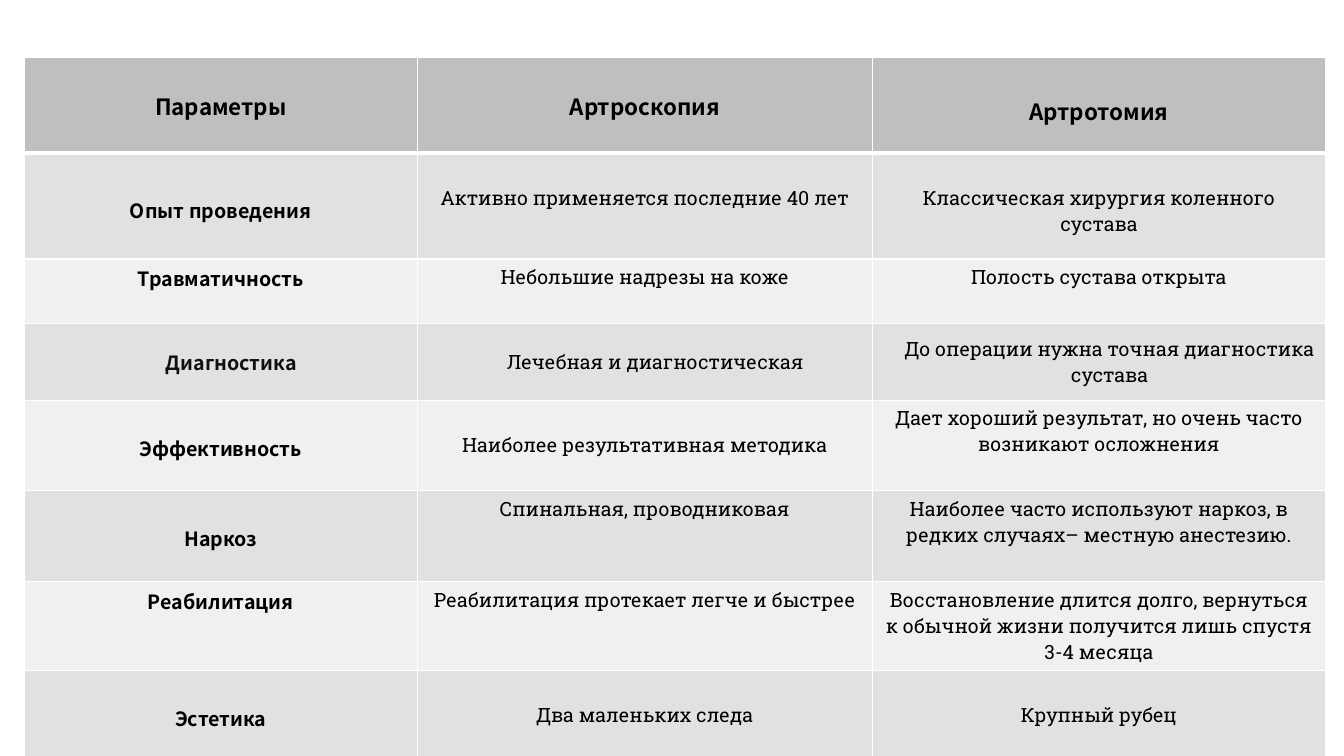
from lxml.etree import SubElement
from pptx import Presentation
from pptx.dml.color import RGBColor
from pptx.enum.text import MSO_ANCHOR, PP_ALIGN
from pptx.oxml.ns import qn
from pptx.util import Inches, Pt

SLIDE_WIDTH, SLIDE_HEIGHT = 13.33, 7.5
LABEL_FONT, VALUE_FONT = "Noto Sans CJK JP", "Roboto Slab"
HEADER_FILL, BAND_FILLS = "BFBFBF", ("E1E1E1", "F0F0F0")
TEXT_COLOR, BORDER_COLOR = "000000", "FFFFFF"
COLUMN_WIDTHS = (3.9, 4.51, 4.5)
PADDING = 0.05

# Each row: height, extra space above the text in each cell, cell texts
HEADER = (0.95, (0.27, 0.27, 0.32), ("Параметры", "Артроскопия", "Артротомия"))
MIDDLE_ROW = "Диагностика"
BODY = (
    (1.05, (0.37, 0.26, 0.26),
     ("Опыт проведения", "Активно применяется последние 40 лет",
      "Классическая хирургия коленного сустава")),
    (0.64, (0, 0, 0),
     ("Травматичность", "Небольшие надрезы на коже", "Полость сустава открыта")),
    (0.76, (0, 0, 0),
     (MIDDLE_ROW, "Лечебная и диагностическая",
      "До операции нужна точная диагностика сустава")),
    (0.9, (0.28, 0.26, 0),
     ("Эффективность", "Наиболее результативная методика",
      "Дает хороший результат, но очень часто возникают осложнения")),
    (0.9, (0.28, 0, 0),
     ("Наркоз", "Спинальная, проводниковая",
      "Наиболее часто используют наркоз, в редких случаях– местную анестезию.")),
    (0.88, (0, 0, 0),
     ("Реабилитация", "Реабилитация протекает легче и быстрее",
      "Восстановление длится долго, вернуться к обычной жизни получится "
      "лишь спустя 3-4 месяца")),
    (0.86, (0.28, 0.26, 0.26),
     ("Эстетика", "Два маленьких следа", "Крупный рубец")),
)


def color(hex_value):
    return RGBColor.from_string(hex_value)


def set_borders(cell, top_width, bottom_width):
    properties = cell._tc.get_or_add_tcPr()
    widths = {"a:lnL": 1, "a:lnR": 1, "a:lnT": top_width, "a:lnB": bottom_width}
    for tag, width in widths.items():
        line = SubElement(properties, qn(tag), w=str(Pt(width)))
        fill = SubElement(line, qn("a:solidFill"))
        SubElement(fill, qn("a:srgbClr"), val=BORDER_COLOR)


def write_cell(cell, text, font_name, size, bold, text_color, space_above):
    cell.margin_top = Inches(PADDING + space_above)
    cell.margin_bottom = Inches(PADDING)
    paragraph = cell.text_frame.paragraphs[0]
    paragraph.alignment = PP_ALIGN.CENTER
    run = paragraph.add_run()
    run.text = text
    run.font.name = font_name
    run.font.size = Pt(size)
    run.font.bold = bold
    run.font.color.rgb = color(text_color)


def add_comparison_table(slide, left, top, width, height):
    rows = (HEADER, *BODY)
    frame = slide.shapes.add_table(len(rows), len(COLUMN_WIDTHS), Inches(left),
                                   Inches(top), Inches(width), Inches(height))
    table = frame.table
    for column, share in zip(table.columns, COLUMN_WIDTHS):
        column.width = Inches(width * share / sum(COLUMN_WIDTHS))

    total_height = sum(row[0] for row in rows)
    for row_index, (row_height, spaces, texts) in enumerate(rows):
        table.rows[row_index].height = Inches(height * row_height / total_height)
        is_header = row_index == 0
        is_middle = texts[0] == MIDDLE_ROW
        for column_index, (space, text) in enumerate(zip(spaces, texts)):
            cell = table.cell(row_index, column_index)
            is_label = is_header or column_index == 0
            # White grid with a thicker rule under the header
            set_borders(cell, 3 if row_index == 1 else 1, 3 if is_header else 1)
            cell.fill.solid()
            cell.fill.fore_color.rgb = color(
                HEADER_FILL if is_header else BAND_FILLS[(row_index - 1) % 2])
            write_cell(cell, text, LABEL_FONT if is_label else VALUE_FONT,
                       16 if is_header else 14, is_label,
                       "101010" if is_middle and is_label else TEXT_COLOR, space)
            if is_middle:
                cell.vertical_anchor = MSO_ANCHOR.MIDDLE
                cell.margin_left = Inches(0.31)
                cell.margin_top = cell.margin_bottom = Inches(0.1)


def main():
    presentation = Presentation()
    presentation.slide_width = Inches(SLIDE_WIDTH)
    presentation.slide_height = Inches(SLIDE_HEIGHT)
    slide = presentation.slides.add_slide(presentation.slide_layouts[6])
    table_height = sum(row[0] for row in (HEADER, *BODY))
    add_comparison_table(slide, 0.24, 0.57, sum(COLUMN_WIDTHS), table_height)
    presentation.save("out.pptx")


if __name__ == "__main__":
    main()
